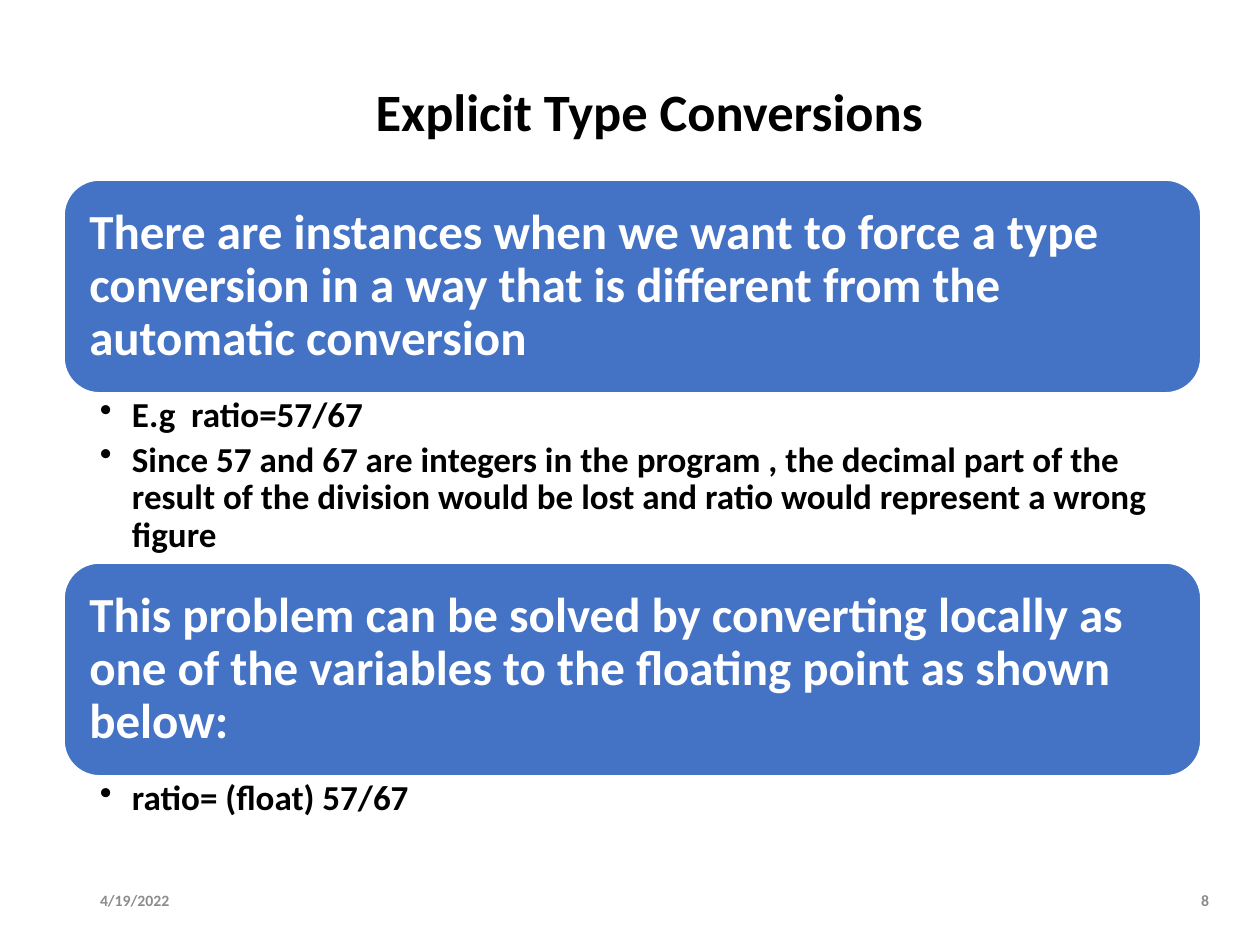
from pptx import Presentation
from pptx.dml.color import RGBColor
from pptx.enum.shapes import MSO_SHAPE
from pptx.enum.text import MSO_ANCHOR, PP_ALIGN
from pptx.oxml.ns import qn
from pptx.util import Emu, Pt
from lxml.etree import SubElement

COLORS = {"text": "000000", "panel": "4472C4", "white": "FFFFFF", "footer": "8C8C8C"}
FONT = "Calibri"
PX_PER_INCH = 126
LEFT, WIDTH, PANEL_HEIGHT = 64, 1137, 213


def px(length):
    return Emu(round(length * 914400 / PX_PER_INCH))


def color(name):
    return RGBColor.from_string(COLORS[name])


class SlideBuilder:
    def __init__(self, page):
        self.page = page

    def fill_text(self, box, lines, size, ink, insets, anchor=MSO_ANCHOR.MIDDLE,
                  align=PP_ALIGN.LEFT, bullets=False):
        frame = box.text_frame
        frame.word_wrap = True
        frame.vertical_anchor = anchor
        frame.margin_left, frame.margin_top, frame.margin_right, frame.margin_bottom = map(px, insets)
        frame.text = "\n".join(lines)
        for para in frame.paragraphs:
            para.alignment = align
            para.line_spacing = 0.9
            if bullets:
                self.add_bullet(para)
            for span in para.runs:
                span.font.name = FONT
                span.font.size = Pt(size)
                span.font.bold = True
                span.font.color.rgb = color(ink)

    def add_bullet(self, para):
        para.space_after = Pt(4)
        properties = para._p.get_or_add_pPr()
        indent = px(32)
        properties.set("marL", str(indent))
        properties.set("indent", str(-indent))
        SubElement(properties, qn("a:buChar")).set("char", "•")

    def label(self, text, left, top, width, height, size, ink, align):
        box = self.page.shapes.add_textbox(px(left), px(top), px(width), px(height))
        self.fill_text(box, [text], size, ink, (13, 6, 13, 6), align=align)

    def panel(self, text, top):
        shape = self.page.shapes.add_shape(
            MSO_SHAPE.ROUNDED_RECTANGLE, px(LEFT), px(top), px(WIDTH), px(PANEL_HEIGHT))
        shape.shadow.inherit = False
        shape.fill.solid()
        shape.fill.fore_color.rgb = color("panel")
        shape.line.color.rgb = color("white")
        shape.line.width = Pt(1)
        self.fill_text(shape, [text], 28, "white", (15, 15, 15, 15))

    def bullet_list(self, lines, top, height):
        box = self.page.shapes.add_textbox(px(LEFT), px(top), px(WIDTH), px(height))
        self.fill_text(box, lines, 20, "text", (36, 4, 20, 4), MSO_ANCHOR.TOP, bullets=True)


def main():
    deck = Presentation()
    deck.slide_width, deck.slide_height = px(1260), px(945)
    builder = SlideBuilder(deck.slides.add_slide(deck.slide_layouts[6]))

    builder.label("Explicit Type Conversions ", 87, 71, 1137, 87, 30, "text", PP_ALIGN.CENTER)
    builder.label("4/19/2022", 87, 876, 120, 50, 9, "footer", PP_ALIGN.LEFT)
    builder.label("8", 1173, 876, 49, 50, 9, "footer", PP_ALIGN.RIGHT)

    sections = [
        ("There are instances when we want to force a type conversion in a way that is "
         "different from the automatic conversion",
         ["E.g  ratio=57/67",
          "Since 57 and 67 are integers in the program , the decimal part of the result of "
          "the division would be lost and ratio would represent a wrong figure"], 170),
        ("This problem can be solved by converting locally as one of the variables to the "
         "floating point as shown below:",
         ["ratio= (float) 57/67"], 62),
    ]
    top = 180
    for heading, points, list_height in sections:
        builder.panel(heading, top)
        builder.bullet_list(points, top + PANEL_HEIGHT, list_height)
        top += PANEL_HEIGHT + list_height

    deck.save("out.pptx")


if __name__ == "__main__":
    main()
